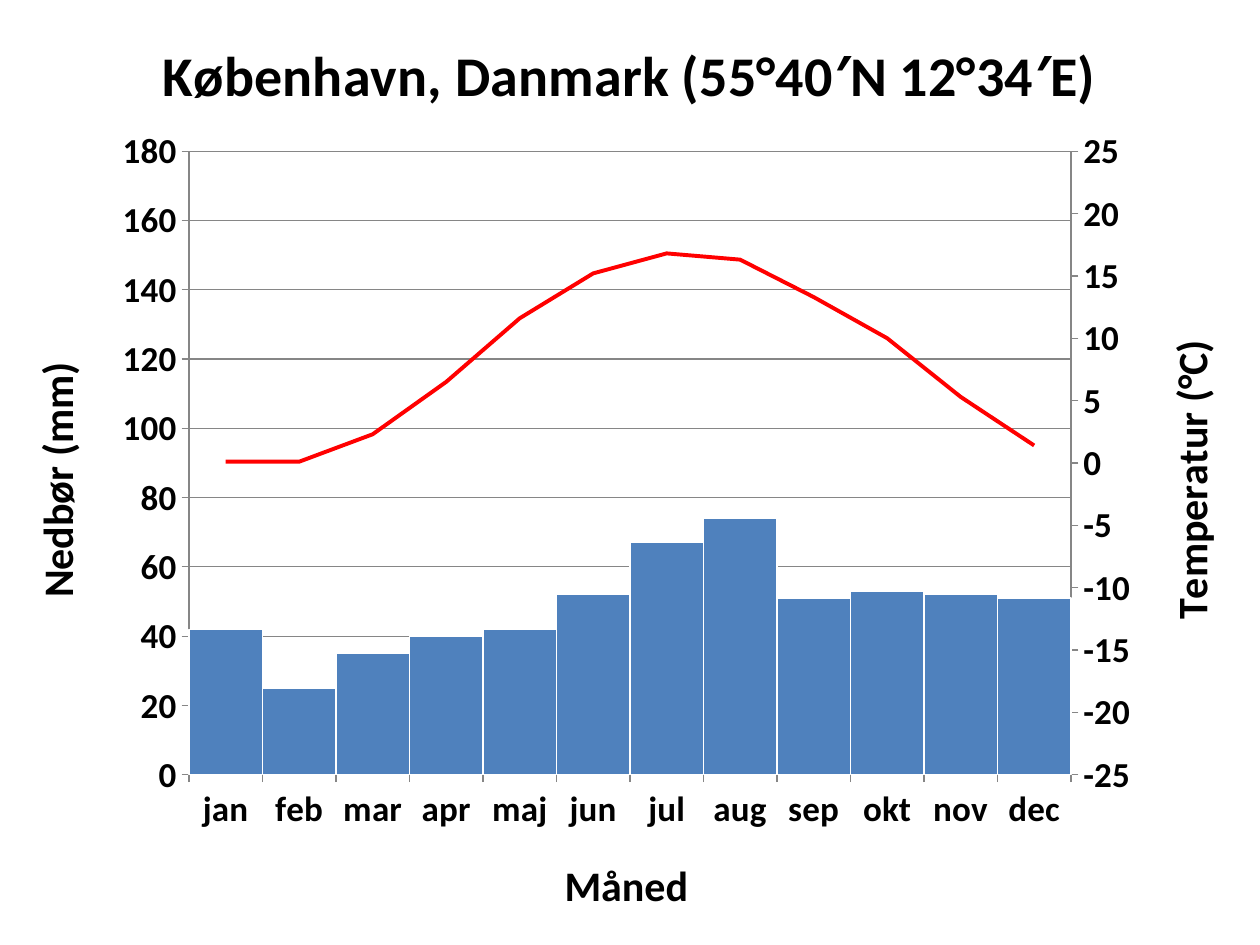
from copy import deepcopy
from dataclasses import dataclass

from lxml import etree
from pptx import Presentation
from pptx import util as u
from pptx.chart.axis import CategoryAxis, ValueAxis
from pptx.chart.data import CategoryChartData
from pptx.dml.color import RGBColor
from pptx.enum import chart as charts
from pptx.oxml import parse_xml
from pptx.oxml.ns import nsdecls, qn

MONTHS = ["jan", "feb", "mar", "apr", "maj", "jun",
          "jul", "aug", "sep", "okt", "nov", "dec"]
RAINFALL = [42, 25, 35, 40, 42, 52, 67, 74, 51, 53, 52, 51]
TEMPERATURE = [0.1, 0.1, 2.3, 6.5, 11.6, 15.2, 16.8, 16.3, 13.3, 10, 5.3, 1.4]


@dataclass(frozen=True)
class Theme:
    """Colours, font and type sizes of the slide."""
    font: str = "Calibri"
    ink: str = "000000"
    rain: str = "4F81BD"
    warmth: str = "FF0000"
    edge: str = "FFFFFF"
    grid: str = "868686"
    base_size: int = 10
    title_size: int = 32
    axis_title_size: int = 24
    label_size: int = 20


class ClimateSlide:
    """Holds the style and the current slide."""

    def __init__(self, presentation, theme):
        """Start an empty slide."""
        self.theme = theme
        self.slide = presentation.slides.add_slide(presentation.slide_layouts[6])

    def style_font(self, font, size, bold=True):
        """Apply the theme's font and ink."""
        font.name = self.theme.font
        font.size = u.Pt(size)
        font.bold = bold
        font.color.rgb = RGBColor.from_string(self.theme.ink)

    def style_line(self, line, colour, width=0.75):
        """Colour a line."""
        line.color.rgb = RGBColor.from_string(colour)
        line.width = u.Pt(width)

    def write_title(self, title, words, size):
        """Write a chart or axis title."""
        paragraph = title.text_frame.paragraphs[0]
        paragraph.clear()
        run = paragraph.add_run()
        run.text = words
        self.style_font(run.font, size)

    def style_axis(self, axis, words):
        """Format an axis and its title."""
        axis.has_title = True
        self.write_title(axis.axis_title, words, self.theme.axis_title_size)
        axis.major_tick_mark = charts.XL_TICK_MARK.OUTSIDE
        axis.minor_tick_mark = charts.XL_TICK_MARK.NONE
        axis.tick_labels.number_format = "General"
        axis.tick_labels.number_format_is_linked = False
        self.style_font(axis.tick_labels.font, self.theme.label_size)
        self.style_line(axis.format.line, self.theme.grid)

    def style_value_axis(self, axis, words, low, high, step):
        """Format a value axis with its scale and upright title."""
        self.style_axis(axis, words)
        axis.minimum_scale, axis.maximum_scale = low, high
        axis.major_unit = step
        for body in axis.axis_title._element.iter(qn("a:bodyPr")):
            body.set("rot", "-5400000")
            body.set("vert", "horz")

    def place_plot(self, plot_area, **fractions):
        """Fix the inner plot area as fractions of the chart."""
        for layout in plot_area.findall(qn("c:layout")):
            plot_area.remove(layout)
        settings = {"layoutTarget": "inner", "xMode": "edge", "yMode": "edge", **fractions}
        parts = "".join(f'<c:{name} val="{value}"/>' for name, value in settings.items())
        plot_area.insert(0, parse_xml(
            f'<c:layout {nsdecls("c")}><c:manualLayout>{parts}</c:manualLayout></c:layout>'))

    def add_right_axis(self, chart):
        """Move the last series to a line plot and return its right axis."""
        bar = chart.plots[0]._element
        series = bar.findall(qn("c:ser"))[-1]
        for flag in series.findall(qn("c:invertIfNegative")):
            series.remove(flag)
        line = parse_xml(f'<c:lineChart {nsdecls("c")}><c:grouping val="standard"/>'
                         '<c:varyColors val="0"/><c:marker val="1"/></c:lineChart>')
        line.insert(2, series)
        bar.addnext(line)
        category = deepcopy(chart.category_axis._element)
        value = deepcopy(chart.value_axis._element)
        chart.value_axis._element.addnext(value)
        value.addnext(category)
        for axis, own, other in ((category, "5001", "5002"), (value, "5002", "5001")):
            axis.find(qn("c:axId")).set("val", own)
            axis.find(qn("c:crossAx")).set("val", other)
            etree.SubElement(line, qn("c:axId")).set("val", own)
        value.find(qn("c:axPos")).set("val", "r")
        value.find(qn("c:crosses")).set("val", "max")
        hidden = CategoryAxis(category)
        hidden.has_title = False
        hidden.visible = False
        right = ValueAxis(value)
        right.has_major_gridlines = False
        return right

    def add_climate_chart(self, title, left, top, width, height):
        """Add rainfall columns with a temperature line."""
        theme = self.theme
        data = CategoryChartData()
        data.categories = MONTHS
        data.add_series("Series 1", RAINFALL)
        data.add_series("Series 2", TEMPERATURE)
        chart = self.slide.shapes.add_chart(
            charts.XL_CHART_TYPE.COLUMN_CLUSTERED, u.Inches(left), u.Inches(top),
            u.Inches(width), u.Inches(height), data).chart
        self.style_font(chart.font, theme.base_size, False)
        chart.has_legend = False
        chart.has_title = True
        self.write_title(chart.chart_title, title, theme.title_size)
        chart.chart_title.include_in_layout = False

        self.style_axis(chart.category_axis, "Måned")
        self.style_value_axis(chart.value_axis, "Nedbør (mm)", 0, 180, 20)
        chart.value_axis.has_major_gridlines = True
        self.style_line(chart.value_axis.major_gridlines.format.line, theme.grid)
        right = self.add_right_axis(chart)
        self.style_value_axis(right, "Temperatur (°C)", -25, 25, 5)

        columns, line = chart.plots
        columns.gap_width = 0
        columns.vary_by_categories = False
        rain = columns.series[0]
        rain.format.fill.solid()
        rain.format.fill.fore_color.rgb = RGBColor.from_string(theme.rain)
        self.style_line(rain.format.line, theme.edge)
        warmth = line.series[0]
        warmth.smooth = False
        warmth.marker.style = charts.XL_MARKER_STYLE.NONE
        self.style_line(warmth.format.line, theme.warmth, 2.25)
        self.place_plot(columns._element.getparent(), x=0.15, y=0.16, w=0.7, h=0.66)


def main():
    """Build and save the slide."""
    presentation = Presentation()
    presentation.slide_width = u.Inches(10)
    presentation.slide_height = u.Inches(7.5)
    climate = ClimateSlide(presentation, Theme())
    climate.add_climate_chart("København, Danmark (55°40′N 12°34′E)", 0, 0, 10, 7.5)
    presentation.save("out.pptx")


if __name__ == "__main__":
    main()
